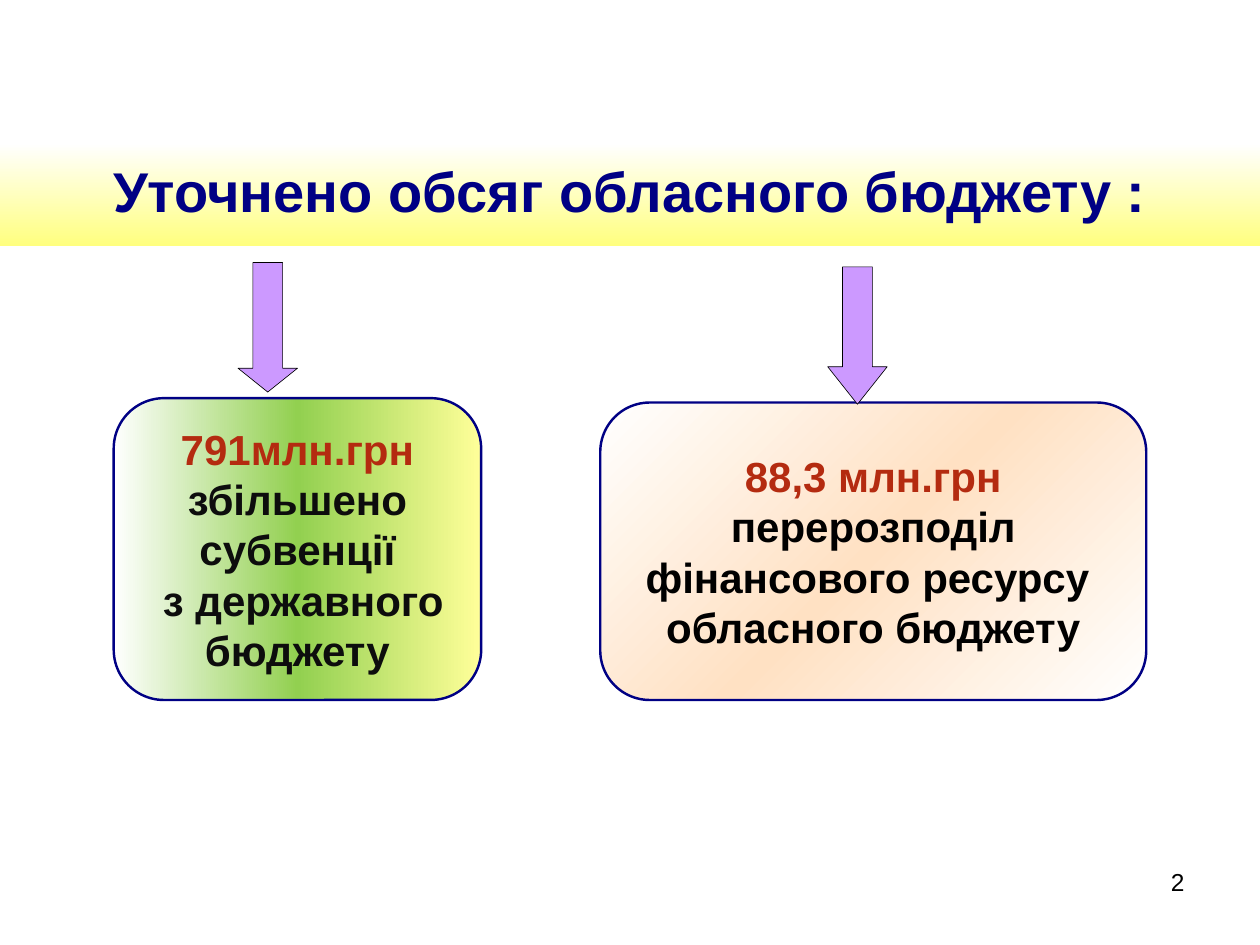
"""Builds the slide on the revised regional budget."""
from copy import deepcopy

from pptx import Presentation
from pptx.dml.color import RGBColor
from pptx.enum.shapes import MSO_SHAPE
from pptx.enum.text import MSO_ANCHOR, MSO_AUTO_SIZE, PP_ALIGN
from pptx.util import Pt

BOX = MSO_SHAPE.FLOWCHART_ALTERNATE_PROCESS
ARROW = MSO_SHAPE.DOWN_ARROW
TOP, MIDDLE = MSO_ANCHOR.TOP, MSO_ANCHOR.MIDDLE
NO_FIT = MSO_AUTO_SIZE.NONE
CENTER, RIGHT = PP_ALIGN.CENTER, PP_ALIGN.RIGHT


def rgb(value):
    """Turns a hex string into a colour."""
    return RGBColor.from_string(value)


class Deck:
    """Holds the style and the current slide."""

    font = "Arial"
    navy, red, black = "000084", "B42B10", "000000"
    lilac = "CC99FF"

    def __init__(self, prs):
        """Adds a slide with a title only."""
        self.s = prs.slides.add_slide(prs.slide_layouts[5])

    def gradient(self, sp, colors, angle):
        """Fills a shape with evenly spaced colours at a clockwise angle."""
        sp.fill.gradient()
        sp.fill.gradient_angle = -angle % 360
        stops = sp._element.spPr.gradFill.gsLst
        for _ in colors[2:]:
            stops.insert(1, deepcopy(stops[0]))
        for i, (stop, color) in enumerate(zip(sp.fill.gradient_stops, colors)):
            stop.position = i / (len(colors) - 1)
            stop.color.rgb = rgb(color)

    def outline(self, sp, color, width):
        """Draws the outline of a shape without a shadow."""
        sp.shadow.inherit = False
        sp.line.color.rgb = rgb(color)
        sp.line.width = Pt(width)

    def text(self, sp, lines, size, bold, align, anchor):
        """Sets one paragraph for each pair of text and colour."""
        tf = sp.text_frame
        tf.word_wrap = True
        tf.auto_size = NO_FIT
        tf.vertical_anchor = anchor
        for i, (words, color) in enumerate(lines):
            p = tf.add_paragraph() if i else tf.paragraphs[0]
            p.alignment = align
            r = p.add_run()
            r.text = words
            r.font.name = self.font
            r.font.size = Pt(size)
            r.font.bold = bold
            r.font.color.rgb = rgb(color)

    def title(self, words, x, y, w, h):
        """Places the title on its gradient band."""
        sp = self.s.shapes.title
        sp.left, sp.top, sp.width, sp.height = Pt(x), Pt(y), Pt(w), Pt(h)
        self.gradient(sp, ["FFFFFF", "FFFF7F"], 90)
        self.text(sp, [(words, self.navy)], 32, True, CENTER, TOP)
        sp.text_frame.margin_top = Pt(7.2)

    def box(self, lines, x, y, w, h, colors, angle):
        """Adds a rounded box with centred text."""
        sp = self.s.shapes.add_shape(BOX, Pt(x), Pt(y), Pt(w), Pt(h))
        self.gradient(sp, colors, angle)
        self.outline(sp, self.navy, 1.38)
        self.text(sp, lines, 24, True, CENTER, MIDDLE)

    def arrow(self, x, y, w, h, head):
        """Adds a block arrow pointing down."""
        sp = self.s.shapes.add_shape(ARROW, Pt(x), Pt(y), Pt(w), Pt(h))
        sp.adjustments[0], sp.adjustments[1] = 0.5, head
        sp.fill.solid()
        sp.fill.fore_color.rgb = rgb(self.lilac)
        self.outline(sp, self.black, 0.38)

    def number(self, words, x, y, w, h):
        """Adds the slide number."""
        sp = self.s.shapes.add_textbox(Pt(x), Pt(y), Pt(w), Pt(h))
        self.text(sp, [(words, self.black)], 14, False, RIGHT, TOP)


def main():
    """Builds and saves the slide."""
    prs = Presentation()
    prs.slide_width, prs.slide_height = Pt(720), Pt(540)
    deck = Deck(prs)
    deck.title("Уточнено обсяг обласного бюджету :", 0, 82, 720, 58.5)
    deck.number("2", 516, 492, 168, 37.5)
    deck.box(
        [("791млн.грн", deck.red),
         ("збільшено субвенції", "0D0D0D"),
         (" з державного бюджету", "0D0D0D")],
        65, 227.5, 210, 172.5, ["FFFFFF", "92D050", "FFFF99"], 0)
    deck.box(
        [("88,3 млн.грн", deck.red),
         ("перерозподіл фінансового ресурсу  обласного бюджету", deck.black)],
        343, 230, 312, 170, ["FFFFFF", "FFE1C3", "FFFFFF"], 45)
    deck.arrow(136, 150, 34, 74, 0.4)
    deck.arrow(473, 152.5, 34, 78.5, 0.63)
    prs.save("out.pptx")


if __name__ == "__main__":
    main()
